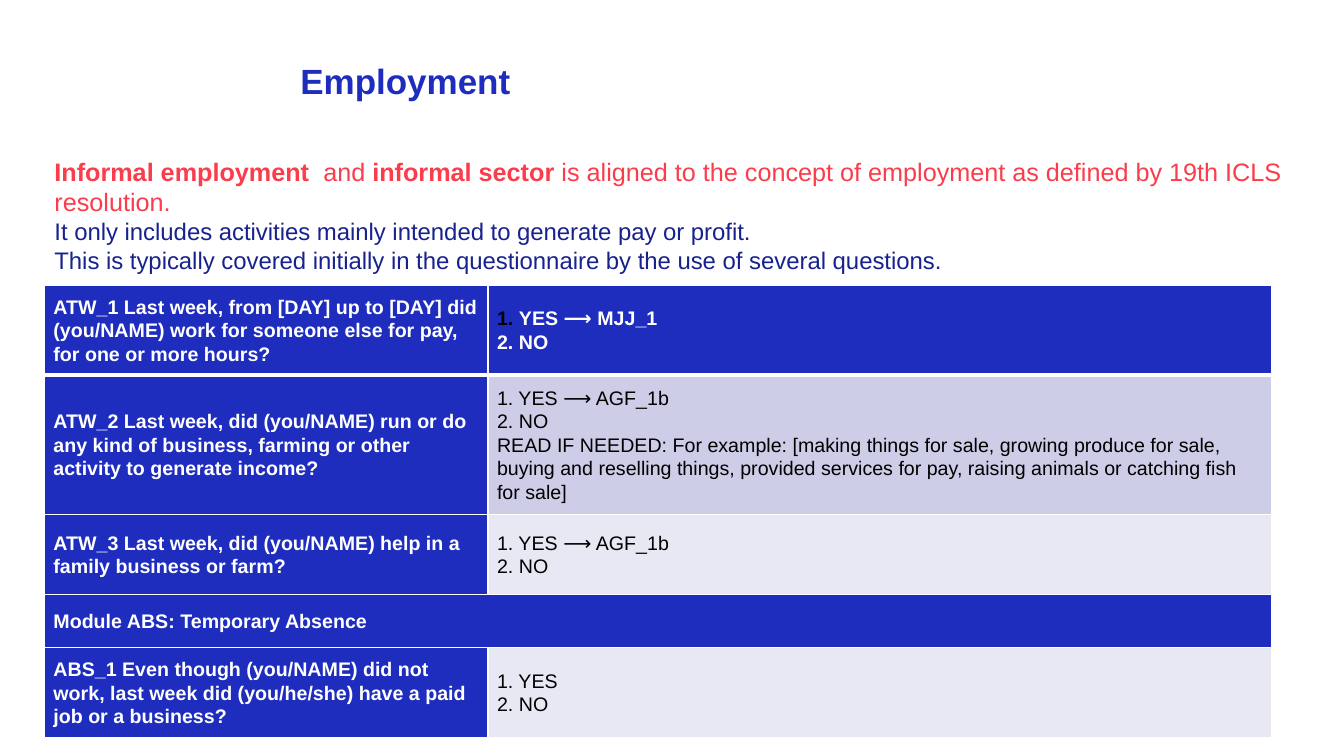
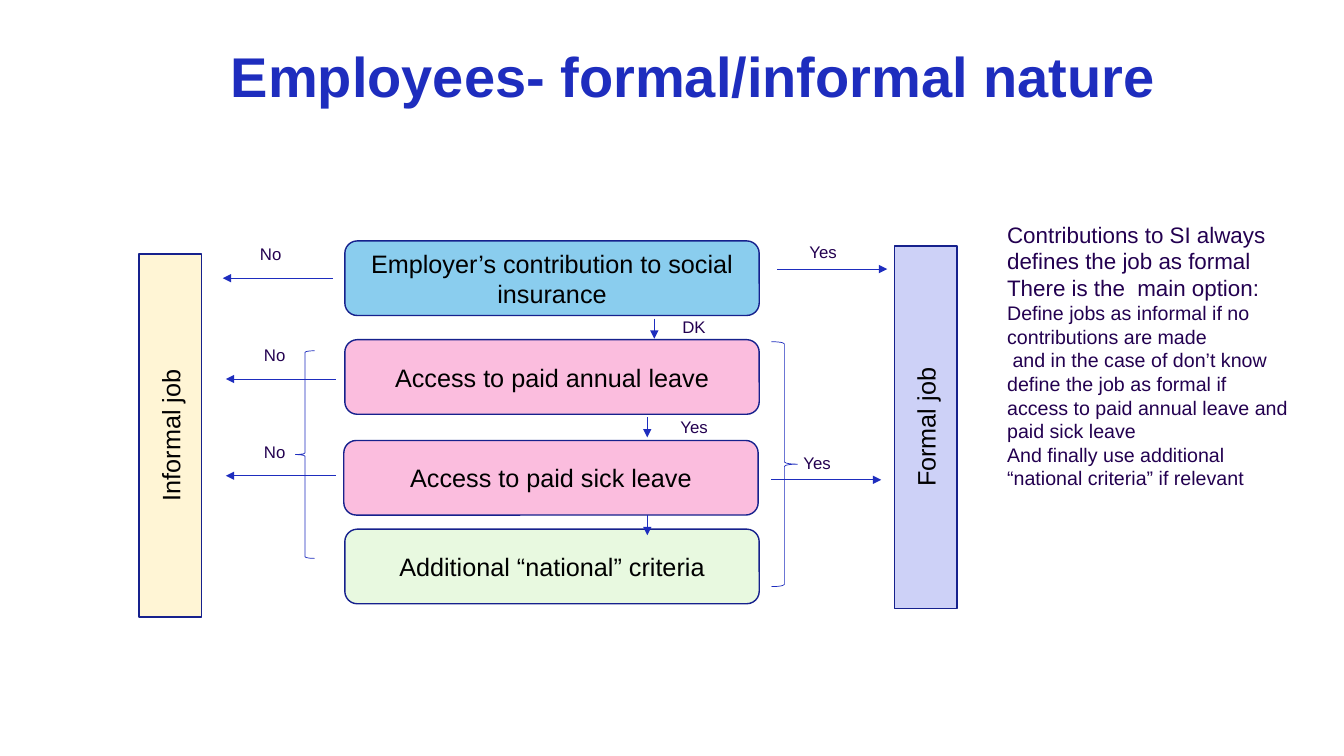
from pptx import Presentation
from pptx.dml.color import RGBColor
from pptx.enum.shapes import MSO_CONNECTOR, MSO_SHAPE
from pptx.enum.text import MSO_ANCHOR, PP_ALIGN
from pptx.oxml import parse_xml
from pptx.oxml.ns import nsdecls
from pptx.util import Inches, Pt
from lxml.etree import SubElement
from pptx.oxml.ns import qn

FONT = "Arial"
BLUE = RGBColor(0x1E, 0x2D, 0xBE)
NAVY = RGBColor(0x16, 0x21, 0x8D)
INTRO = RGBColor(0x17, 0x22, 0x8E)
RED = RGBColor(0xFA, 0x3C, 0x4B)
PURPLE = RGBColor(0x23, 0x00, 0x50)
BLACK = RGBColor(0x00, 0x00, 0x00)
WHITE = RGBColor(0xFF, 0xFF, 0xFF)
SKY = RGBColor(0x8A, 0xCD, 0xEE)
PINK = RGBColor(0xFB, 0xBD, 0xDE)
GREEN = RGBColor(0xE8, 0xF9, 0xE0)
CREAM = RGBColor(0xFF, 0xF5, 0xD5)
LILAC = RGBColor(0xCD, 0xD1, 0xF7)
BAND_DARK = RGBColor(0xCD, 0xCD, 0xE8)
BAND_LIGHT = RGBColor(0xE8, 0xE8, 0xF4)

TITLES = [
    ("Employment", (2.98, 0.64, 10.2, 0.79), 25),
    ("Employees- formal/informal nature", (2.29, 0.49, 10.71, 0.62), 40),
]

INTRO_RUNS = [
    ("Informal employment ", {"bold": True}),
    (" and ", {}),
    ("informal sector ", {"bold": True}),
    ("is aligned to the concept of employment as defined by 19th ICLS resolution.\n", {}),
    ("It only includes activities mainly intended to generate pay or profit. \n"
     "This is typically covered initially in the questionnaire by the use of several questions.",
     {"size": 17.1, "color": INTRO}),
]

COLS = [4.4, 7.77]
QUESTIONS = [
    (0.79, "ATW_1 Last week, from [DAY] up to [DAY] did (you/NAME) work for someone else for pay, "
     "for one or more hours?",
     [("1. ", {"color": BLACK}), ("YES ⟶ MJJ_1\n2. NO", {})], BLUE),
    (1.32, "ATW_2 Last week, did (you/NAME) run or do any kind of business, farming or other "
     "activity to generate income?",
     "1. YES ⟶ AGF_1b\n2. NO\nREAD IF NEEDED: For example: [making things for sale, growing "
     "produce for sale, buying and reselling things, provided services for pay, raising animals "
     "or catching fish for sale]", BAND_DARK),
    (0.79, "ATW_3 Last week, did (you/NAME) help in a family business or farm?",
     "1. YES ⟶ AGF_1b\n2. NO", BAND_LIGHT),
    (0.53, "Module ABS: Temporary Absence", None, BLUE),
    (0.79, "ABS_1 Even though (you/NAME) did not work, last week did (you/he/she) have a paid "
     "job or a business?",
     "1. YES\n2. NO", BAND_LIGHT),
]

CRITERIA = [
    ("Employer’s contribution to social insurance", 3.42, 2.39, SKY),
    ("Access to paid annual leave", 3.42, 3.37, PINK),
    ("Access to paid sick leave", 3.41, 4.37, PINK),
    ("Additional “national” criteria", 3.42, 5.25, GREEN),
]
OUTCOMES = [("Informal job", 1.38, 2.52, CREAM), ("Formal job", 8.87, 2.44, LILAC)]
ANSWERS = [
    ("No", 2.48, 2.37), ("No", 2.52, 3.37), ("No", 2.52, 4.33),
    ("Yes", 7.93, 2.35), ("Yes", 7.87, 4.44),
    ("DK", 6.67, 3.09), ("Yes", 6.65, 4.09),
]
ACROSS, DOWN = 1.09, 0.2
ARROWS = [
    (3.3, 2.76, -ACROSS, 0), (3.33, 3.76, -ACROSS, 0), (3.33, 4.72, -ACROSS, 0),
    (7.71, 2.67, ACROSS, 0), (7.65, 4.76, ACROSS, 0),
    (6.49, 3.16, 0, DOWN), (6.42, 4.14, 0, DOWN), (6.42, 5.11, 0, DOWN),
]
BRACES = [
    (MSO_SHAPE.RIGHT_BRACE, (7.65, 3.39, 0.26, 2.43)),
    (MSO_SHAPE.LEFT_BRACE, (2.93, 3.48, 0.19, 2.06)),
]
NOTES = [
    ("Contributions to SI always defines the job as formal", 16),
    ("There is the  main option:", 16),
    ("Define jobs as informal if no contributions are made", 14),
    (" and in the case of don’t know define the job as formal if access to paid annual leave "
     "and paid sick leave", 14),
    ("And finally use additional “national criteria” if relevant", 14),
]


def write(p, text, size=18, color=BLACK, bold=False, align=None, spacing=None, after=None):
    if align is not None:
        p.alignment = align
    if spacing:
        p.line_spacing = spacing
    if after:
        p.space_after = Pt(after)
    runs = [(text, {})] if isinstance(text, str) else text
    for content, own in runs:
        look = {"size": size, "color": color, "bold": bold, **own}
        for i, line in enumerate(content.split("\n")):
            if i:
                p.add_line_break()
            if line:
                r = p.add_run()
                r.text = line
                r.font.name = FONT
                r.font.size = Pt(look["size"])
                r.font.bold = look["bold"]
                r.font.color.rgb = look["color"]


def add_box(s, box, inset=True):
    tf = s.shapes.add_textbox(*map(Inches, box)).text_frame
    tf.word_wrap = True
    if not inset:
        tf.margin_left = tf.margin_right = tf.margin_top = tf.margin_bottom = 0
    return tf


def add_slide(prs, title, box, size):
    s = prs.slides.add_slide(prs.slide_layouts[6])
    tf = add_box(s, box, inset=False)
    write(tf.paragraphs[0], title, size=size, color=BLUE, bold=True, spacing=0.9)
    return s


def add_outline(s, kind, box, fill=None, line=NAVY, width=1):
    sp = s.shapes.add_shape(kind, *map(Inches, box))
    sp.shadow.inherit = False
    if fill is None:
        sp.fill.background()
    else:
        sp.fill.solid()
        sp.fill.fore_color.rgb = fill
    sp.line.color.rgb = line
    sp.line.width = Pt(width)
    return sp


def add_label_shape(s, kind, box, text, fill, vertical=False):
    sp = add_outline(s, kind, box, fill)
    tf = sp.text_frame
    tf.word_wrap = True
    tf.vertical_anchor = MSO_ANCHOR.MIDDLE
    if vertical:
        sp.element.txBody.bodyPr.set("vert", "vert270")
    write(tf.paragraphs[0], text, align=PP_ALIGN.CENTER)


def add_arrow(s, x, y, dx, dy):
    c = s.shapes.add_connector(MSO_CONNECTOR.STRAIGHT, *map(Inches, (x, y, x + dx, y + dy)))
    c.line.color.rgb = BLUE
    c.line.width = Pt(0.5)
    SubElement(c.line._get_or_add_ln(), qn("a:tailEnd"), type="triangle")
    SubElement(c.element.spPr, qn("a:effectLst"))


def fill_cell(cell, text, fill, strong, widths):
    cell.vertical_anchor = MSO_ANCHOR.MIDDLE
    cell.margin_left = cell.margin_right = Inches(0.09)
    cell.margin_top = cell.margin_bottom = Inches(0.07)
    tcPr = cell._tc.get_or_add_tcPr()
    for side, width in zip("LRTB", widths):
        tcPr.append(parse_xml(
            f'<a:ln{side} {nsdecls("a")} w="{Pt(width)}"><a:solidFill>'
            f'<a:srgbClr val="{WHITE}"/></a:solidFill></a:ln{side}>'))
    cell.fill.solid()
    cell.fill.fore_color.rgb = fill
    if text:
        write(cell.text_frame.paragraphs[0], text, size=14, bold=strong,
              color=WHITE if strong else BLACK, spacing=1.07, after=8)


def add_questions(s):
    heights = [q[0] for q in QUESTIONS]
    box = (0.44, 2.83, sum(COLS), sum(heights))
    table = s.shapes.add_table(len(QUESTIONS), len(COLS), *map(Inches, box)).table
    table.horz_banding = False
    for col, width in zip(table.columns, COLS):
        col.width = Inches(width)
    for i, (height, question, answer, fill) in enumerate(QUESTIONS):
        table.rows[i].height = Inches(height)
        widths = (1, 1, 3 if i == 1 else 1, 3 if i == 0 else 1)
        left, right = table.cell(i, 0), table.cell(i, 1)
        if answer is None:
            left.merge(right)
        fill_cell(left, question, BLUE, True, widths)
        fill_cell(right, answer, fill, fill == BLUE, widths)


def main():
    prs = Presentation()
    prs.slide_width, prs.slide_height = Inches(13.33), Inches(7.5)

    s = add_slide(prs, *TITLES[0])
    tf = add_box(s, (0.54, 1.55, 12.26, 1.19), inset=False)
    write(tf.paragraphs[0], INTRO_RUNS, color=RED)
    add_questions(s)

    s = add_slide(prs, *TITLES[1])
    for text, x, y, fill in CRITERIA:
        add_label_shape(s, MSO_SHAPE.ROUNDED_RECTANGLE, (x, y, 4.11, 0.74), text, fill)
    for text, x, y, fill in OUTCOMES:
        add_label_shape(s, MSO_SHAPE.RECTANGLE, (x, y, 0.62, 3.6), text, fill, vertical=True)
    for arrow in ARROWS:
        add_arrow(s, *arrow)
    for kind, box in BRACES:
        add_outline(s, kind, box, line=BLUE, width=0.5)
    for text, x, y in ANSWERS:
        write(add_box(s, (x, y, 0.54, 0.3)).paragraphs[0], text, size=12, color=PURPLE)
    tf = add_box(s, (9.89, 2.14, 3.02, 2.79))
    for i, (text, size) in enumerate(NOTES):
        p = tf.add_paragraph() if i else tf.paragraphs[0]
        write(p, text, size=size, color=PURPLE)

    prs.save("out.pptx")


if __name__ == "__main__":
    main()
